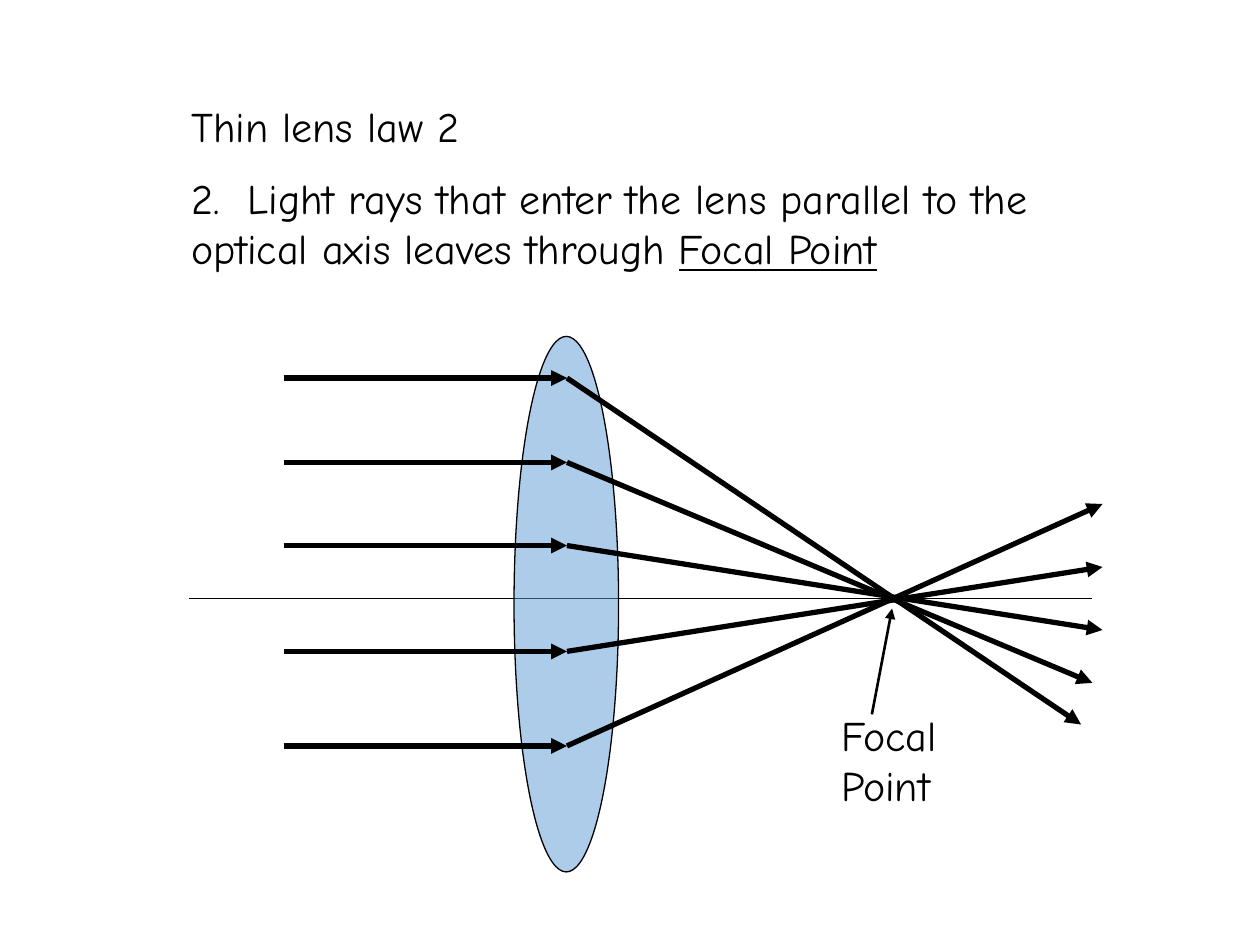
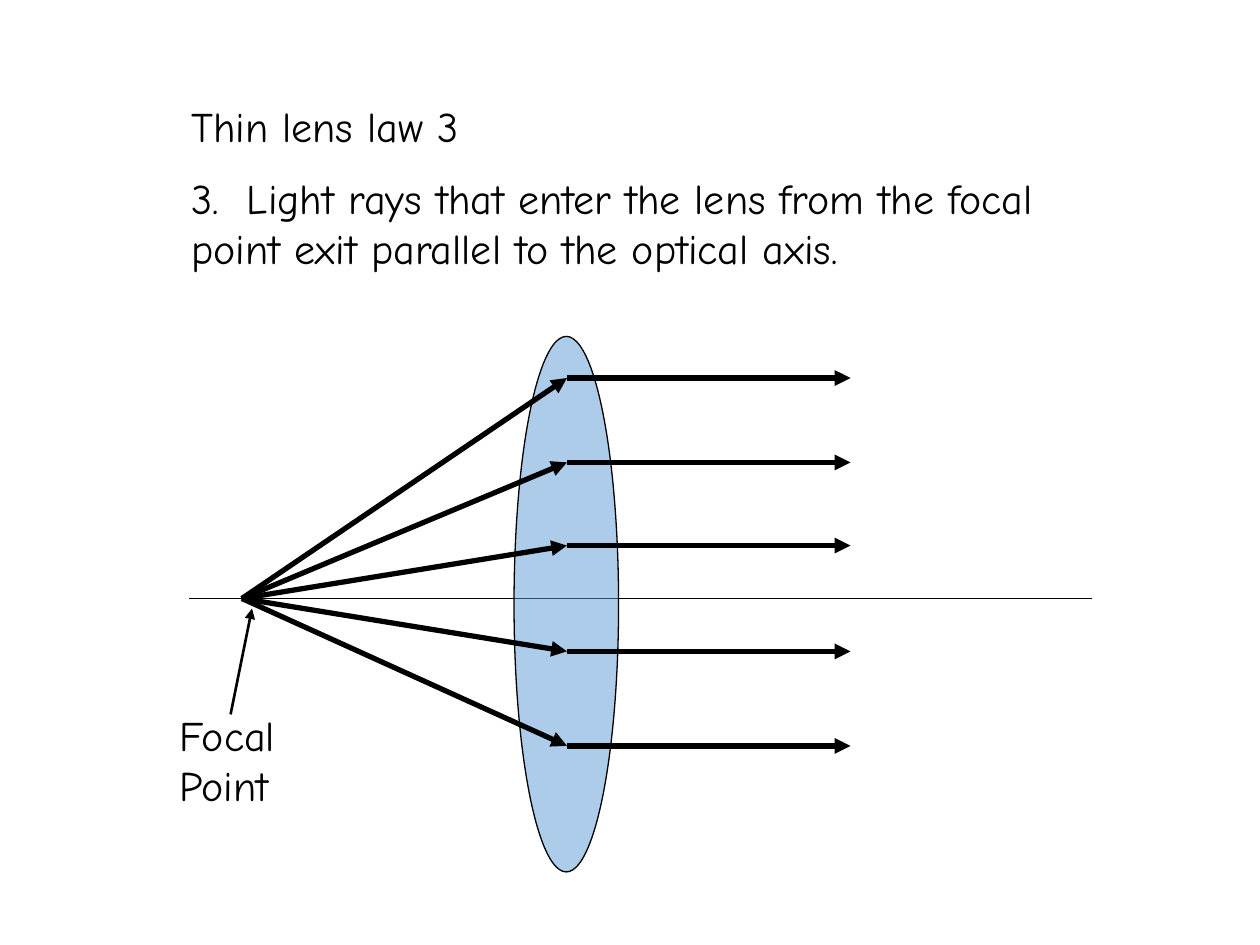
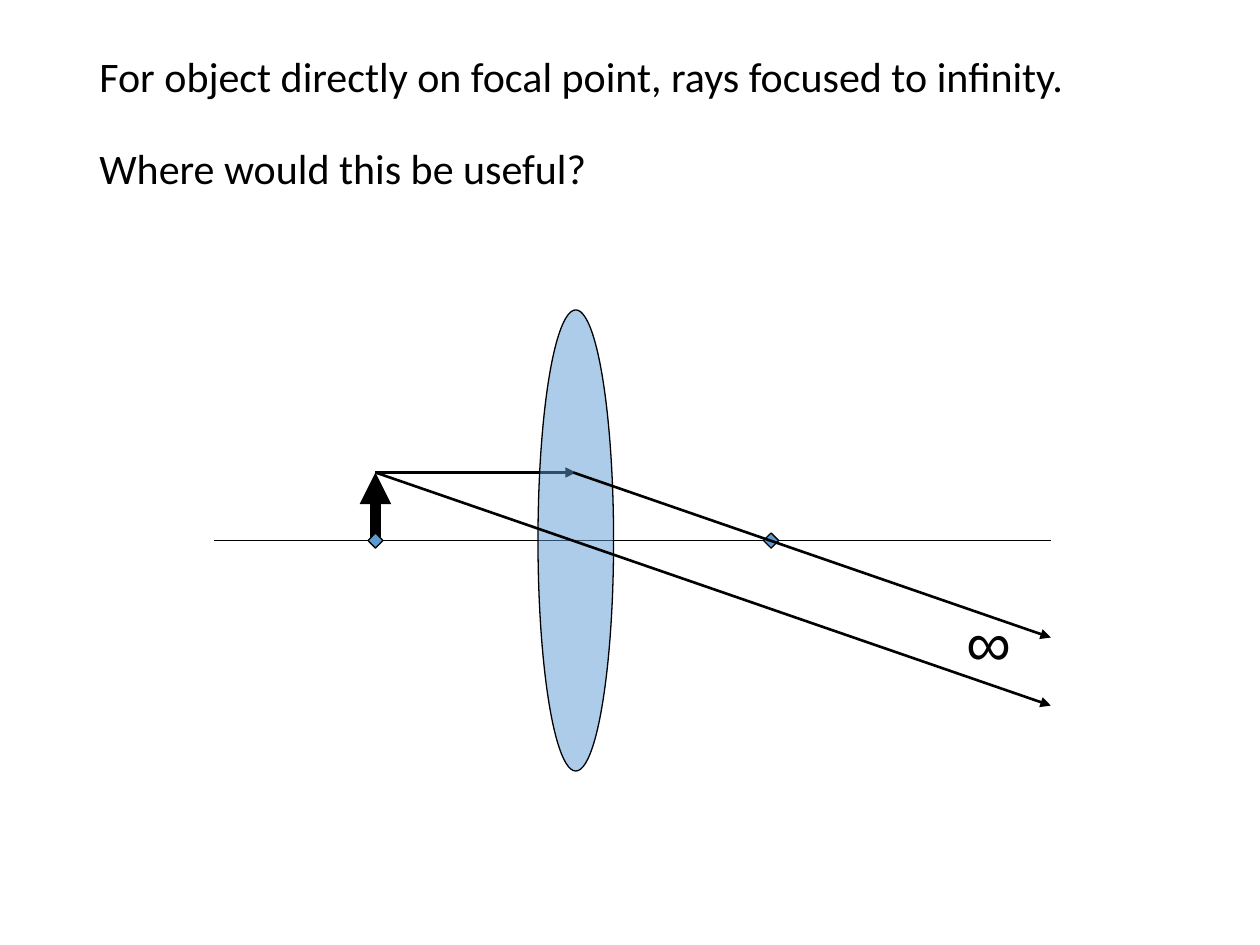
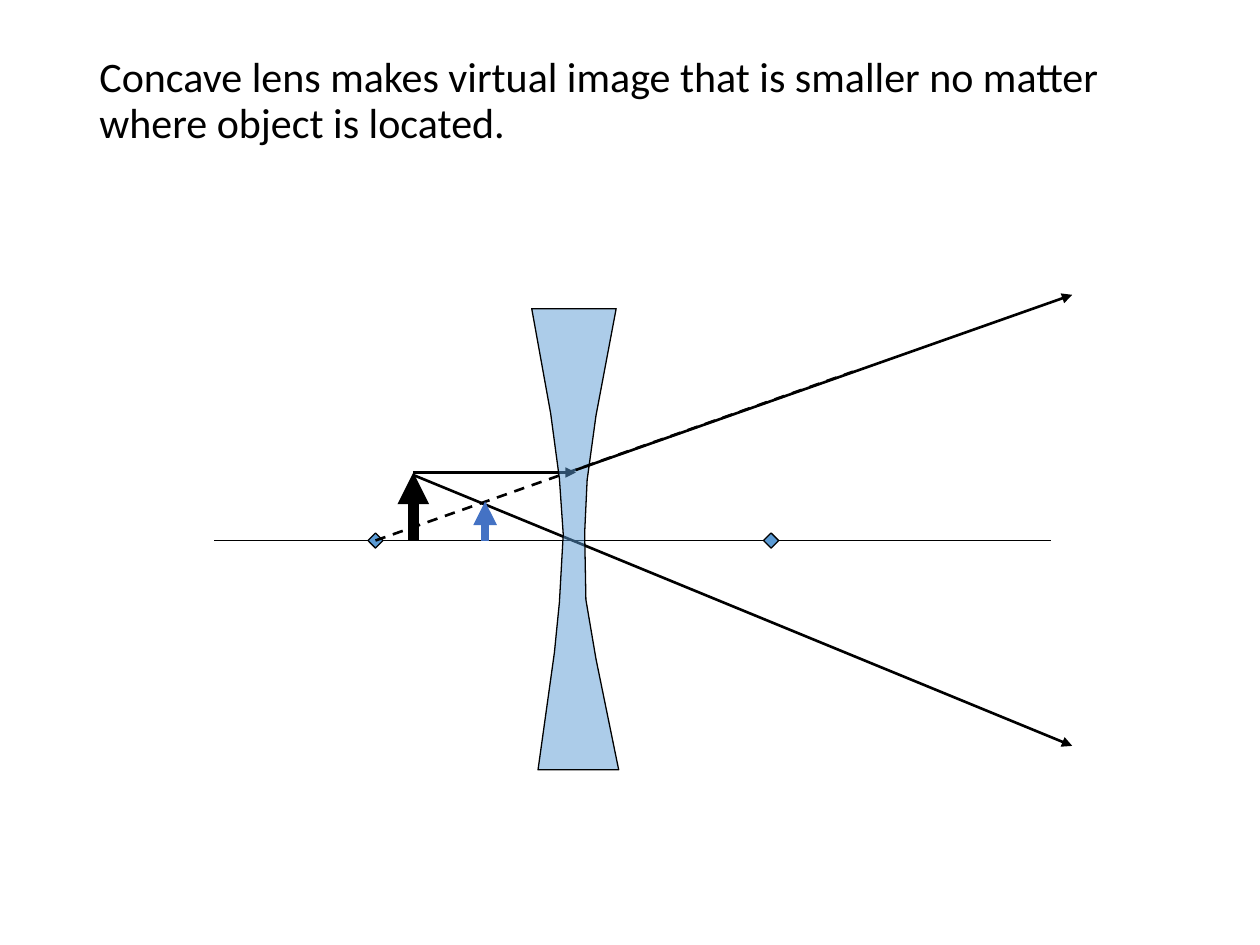
from pptx import Presentation
from pptx.dml.color import RGBColor
from pptx.enum.dml import MSO_LINE
from pptx.enum.shapes import MSO_CONNECTOR, MSO_SHAPE
from pptx.oxml.ns import qn
from pptx.util import Inches, Pt
from lxml.etree import SubElement

COLORS = {"ink": "000000", "glass": "5B9BD5", "image": "4472C4", "paper": "FFFFFF"}
LAW_FONT, CASE_FONT, SYMBOL_FONT = "Comic Neue", "Calibri", "Arial"
HAIRLINE, THIN, THICK = 0.75, 1.5, 3

# Geometry of the two lens laws
LAW_AXIS_Y, LAW_LENS_X = 4.75, 4.5
RAY_HEIGHTS = [3, 3.67, 4.33, 5.17, 5.92]
RAY_ENDS = [(8.58, 5.75), (8.67, 5.42), (8.75, 5), (8.75, 4.5), (8.75, 4)]

# Geometry of the two imaging cases
CASE_AXIS_Y, OBJECT_TOP, CASE_LENS_X = 4.29, 3.75, 4.57
NEAR_FOCUS, FAR_FOCUS = 2.98, 6.12
CONCAVE_OUTLINE = [
    (4.3, 6.11), (4.91, 6.11), (4.73, 5.23), (4.65, 4.76), (4.64, 4.23),
    (4.66, 3.81), (4.73, 3.3), (4.89, 2.45), (4.22, 2.45), (4.37, 3.28),
    (4.44, 3.8), (4.47, 4.24), (4.44, 4.78), (4.4, 5.18), (4.27, 6.11),
]


def rgb(name):
    return RGBColor.from_string(COLORS[name])


def add_slide(deck):
    slide = deck.slides.add_slide(deck.slide_layouts[6])
    slide.background.fill.solid()
    slide.background.fill.fore_color.rgb = rgb("paper")
    return slide


def add_line(slide, start, end, weight=THIN, color="ink", arrow=True, dashed=False):
    line = slide.shapes.add_connector(
        MSO_CONNECTOR.STRAIGHT, *(Inches(v) for v in (*start, *end)))
    line.line.width = Pt(weight)
    line.line.color.rgb = rgb(color)
    if dashed:
        line.line.dash_style = MSO_LINE.DASH
    if arrow:
        SubElement(line.line._get_or_add_ln(), qn("a:tailEnd"), type="triangle")
    SubElement(line._element.spPr, qn("a:effectLst"))


def style_glass(shape, opacity=None):
    shape.shadow.inherit = False
    shape.fill.solid()
    shape.fill.fore_color.rgb = rgb("glass")
    shape.line.color.rgb = rgb("ink")
    shape.line.width = Pt(HAIRLINE)
    if opacity:
        tint = shape._element.spPr.find(qn("a:solidFill"))[0]
        SubElement(tint, qn("a:alpha"), val=str(opacity * 1000))


def add_convex_lens(slide, left, top, width, height):
    lens = slide.shapes.add_shape(
        MSO_SHAPE.OVAL, *(Inches(v) for v in (left, top, width, height)))
    style_glass(lens, opacity=50)


def add_concave_lens(slide):
    corners = [(Inches(x), Inches(y)) for x, y in CONCAVE_OUTLINE]
    outline = slide.shapes.build_freeform(*corners[0], scale=1.0)
    outline.add_line_segments(corners[1:], close=True)
    style_glass(outline.convert_to_shape(), opacity=50)


def add_focus(slide, x, size=0.12):
    focus = slide.shapes.add_shape(
        MSO_SHAPE.DIAMOND, Inches(x - size / 2), Inches(CASE_AXIS_Y - size / 2),
        Inches(size), Inches(size))
    style_glass(focus)


def add_text(slide, place, paragraphs, font, size=24, gap=0, spacing=None):
    """Each paragraph is a list of runs; a second run is underlined."""
    frame = slide.shapes.add_textbox(*(Inches(v) for v in place)).text_frame
    frame.word_wrap = True
    for index, runs in enumerate(paragraphs):
        paragraph = frame.paragraphs[0] if index == 0 else frame.add_paragraph()
        paragraph.font.name = font
        paragraph.font.size = Pt(size)
        paragraph.font.color.rgb = rgb("ink")
        paragraph.space_before = Pt(gap if index else 0)
        if spacing:
            paragraph.line_spacing = spacing
        for position, words in enumerate(runs):
            run = paragraph.add_run()
            run.text = words
            if position == 1:
                run.font.underline = True


def add_law(deck, number, statement):
    """Slide with a law's heading, optical axis and convex lens."""
    slide = add_slide(deck)
    add_text(slide, (1.42, 0.75, 7.17, 2.83),
             [[f"Thin lens law {number}"], statement], LAW_FONT, gap=12)
    add_line(slide, (1.5, LAW_AXIS_Y), (8.67, LAW_AXIS_Y), HAIRLINE, arrow=False)
    add_convex_lens(slide, 4.08, 2.67, 0.83, 4.25)
    return slide


def label_focal_point(slide, left, pointer_x, tip_x):
    add_text(slide, (left, 5.58, 1.05, 1.03), [["Focal"], ["Point"]], LAW_FONT)
    add_line(slide, (pointer_x, 5.67), (tip_x, 4.83))


def add_case_title(slide, *lines):
    add_text(slide, (0.69, 0.4, 8.62, 1.45), [[line] for line in lines],
             CASE_FONT, gap=26.4, spacing=0.9)


def add_case_axis(slide):
    add_line(slide, (1.7, CASE_AXIS_Y), (8.34, CASE_AXIS_Y), HAIRLINE, arrow=False)


def add_upright_arrow(slide, x, top, weight, color="ink"):
    add_line(slide, (x, CASE_AXIS_Y), (x, top), weight, color)


def build_law_2(deck):
    slide = add_law(deck, 2, [
        "2.  Light rays that enter the lens parallel to the optical axis leaves through ",
        "Focal Point"])
    for y, ray_end in zip(RAY_HEIGHTS, RAY_ENDS):
        add_line(slide, (2.25, y), (LAW_LENS_X, y), THICK)
        add_line(slide, (LAW_LENS_X, y), ray_end, THICK)
    label_focal_point(slide, 6.58, 6.92, 7.08)


def build_law_3(deck):
    slide = add_law(deck, 3, [
        "3.  Light rays that enter the lens from the focal point exit parallel "
        "to the optical axis."])
    for y in RAY_HEIGHTS:
        add_line(slide, (1.92, LAW_AXIS_Y), (LAW_LENS_X, y), THICK)
        add_line(slide, (LAW_LENS_X, y), (6.75, y), THICK)
    label_focal_point(slide, 1.33, 1.83, 2)


def build_object_at_focus(deck):
    slide = add_slide(deck)
    object_tip = (NEAR_FOCUS, OBJECT_TOP)
    add_upright_arrow(slide, *object_tip, 6)
    add_case_axis(slide)
    for x in (FAR_FOCUS, NEAR_FOCUS):
        add_focus(slide, x)
    # Parallel ray lies under the glass, refracted rays over it
    add_line(slide, object_tip, (CASE_LENS_X, OBJECT_TOP))
    add_convex_lens(slide, 4.27, 2.46, 0.6, 3.66)
    add_line(slide, object_tip, (8.34, 5.6))
    add_case_title(slide, "For object directly on focal point, rays focused to infinity.",
                   "Where would this be useful?")
    add_line(slide, (4.55, OBJECT_TOP), (8.34, 5.06))
    add_text(slide, (7.57, 4.74, 0.77, 0.7), [["∞"]], SYMBOL_FONT, size=36)


def build_concave_case(deck):
    slide = add_slide(deck)
    object_x = 3.28
    add_case_axis(slide)
    add_line(slide, (object_x, 3.77), (8.51, 5.92))
    for x in (FAR_FOCUS, NEAR_FOCUS):
        add_focus(slide, x)
    add_upright_arrow(slide, object_x, OBJECT_TOP, 6)
    add_line(slide, (object_x, OBJECT_TOP), (CASE_LENS_X, OBJECT_TOP))
    # Virtual ray back to the focus, and the virtual image
    add_line(slide, (NEAR_FOCUS, CASE_AXIS_Y), (6.77, 2.95), arrow=False, dashed=True)
    add_upright_arrow(slide, 3.85, 3.98, 4.5, "image")
    add_concave_lens(slide)
    add_case_title(slide, "Concave lens makes virtual image that is smaller no matter "
                          "where object is located.")
    add_line(slide, (CASE_LENS_X, 3.73), (8.51, 2.34))


def main():
    deck = Presentation()
    deck.slide_width, deck.slide_height = Inches(10), Inches(7.5)
    build_law_2(deck)
    build_law_3(deck)
    build_object_at_focus(deck)
    build_concave_case(deck)
    deck.save("out.pptx")


if __name__ == "__main__":
    main()
